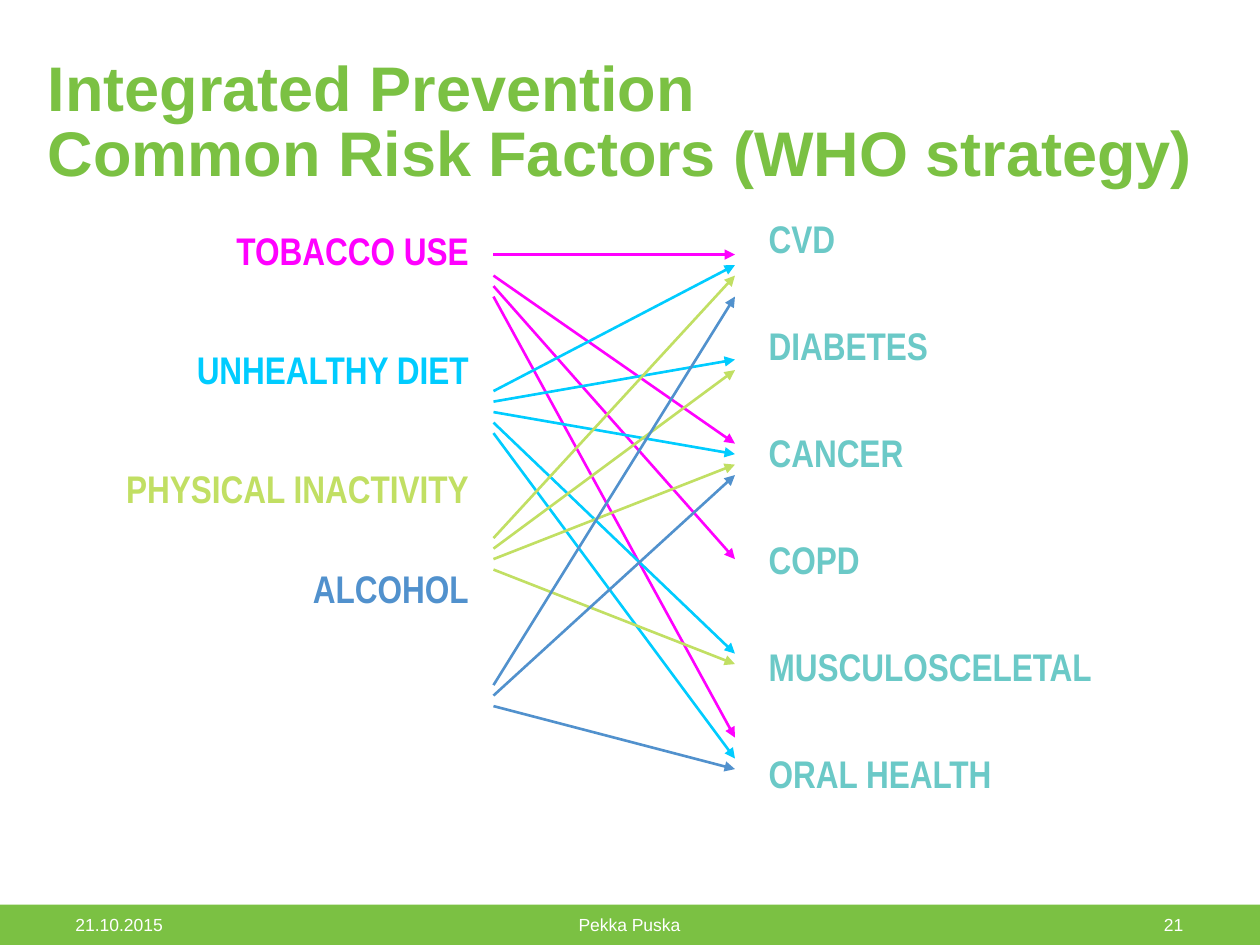
import dataclasses

import pptx
import pptx.dml.color
import pptx.enum.shapes
import pptx.enum.text
import pptx.oxml.ns
import pptx.util
from lxml import etree

ALIGN = pptx.enum.text.PP_ALIGN
ANCHOR = pptx.enum.text.MSO_ANCHOR

# Arrow grid: twelve steps to the inch, rows shifted by a quarter step
STEP = 1 / 12
SHIFT = 0.25
TAIL, HEAD = 47, 70


@dataclasses.dataclass(frozen=True)
class Theme:
    green: str = "7BC143"
    white: str = "FFFFFF"
    teal: str = "6BC9C7"
    pink: str = "FF00FF"
    cyan: str = "00CCFF"
    lime: str = "C1DF63"
    blue: str = "5191CD"
    face: str = "Arial"
    narrow: str = "Arial Narrow"
    title: int = 36
    label: int = 22
    small: int = 10
    line: float = 1.5


THEME = Theme()

# Risk factor, colour, space before, arrows as (start row, end row)
RISKS = [
    ("TOBACCO USE", THEME.pink, 0, [(24, 24), (26, 42), (27, 53), (28, 70)]),
    ("UNHEALTHY DIET", THEME.cyan, 43,
     [(37, 25), (38, 34), (39, 43), (40, 62), (41, 72)]),
    ("PHYSICAL INACTIVITY", THEME.lime, 43,
     [(51, 26), (52, 35), (53, 44), (54, 63)]),
    ("ALCOHOL", THEME.blue, 31.7, [(65, 28), (66, 45), (67, 73)]),
]
ILLS = ["CVD", "DIABETES", "CANCER", "COPD", "MUSCULOSCELETAL", "ORAL HEALTH"]
ILL_GAP = 37.4


def tint(code):
    return pptx.dml.color.RGBColor.from_string(code)


def place(shape, left, top, width, height):
    shape.left, shape.top, shape.width, shape.height = map(
        pptx.util.Inches, (left, top, width, height))


def style(para, face, size, color, bold=False):
    font = para.font
    font.name, font.size, font.bold = face, pptx.util.Pt(size), bold
    font.color.rgb = tint(color)


def set_frame(shape, anchor):
    frame = shape.text_frame
    frame.word_wrap = True
    frame.auto_size = pptx.enum.text.MSO_AUTO_SIZE.NONE
    frame.vertical_anchor = anchor
    return frame


def add_title(slide, text):
    shape = slide.shapes.title
    place(shape, 0.28, 0.3, 9.53, 1.25)
    frame = set_frame(shape, ANCHOR.BOTTOM)
    frame.text = text
    para = frame.paragraphs[0]
    para.alignment = ALIGN.LEFT
    para.line_spacing = 0.85
    style(para, THEME.face, THEME.title, THEME.green, True)


def fill_list(shape, box, items, align, spacing):
    """Fill a body with (text, colour, space before) items, no bullets."""
    place(shape, *box)
    frame = set_frame(shape, ANCHOR.TOP)
    frame.text = "\n".join(text for text, _, _ in items)
    for para, (_, color, gap) in zip(frame.paragraphs, items):
        para.alignment = align
        para.line_spacing = spacing
        para.space_before = pptx.util.Pt(gap)
        props = para._p.get_or_add_pPr()
        props.set("marL", "0")
        props.set("indent", "0")
        etree.SubElement(props, pptx.oxml.ns.qn("a:buNone"))
        style(para, THEME.narrow, THEME.label, color, True)


def add_arrow(slide, start, end, color):
    ends = [pptx.util.Inches(STEP * cell) for cell in
            (TAIL, start + SHIFT, HEAD, end + SHIFT)]
    link = slide.shapes.add_connector(
        pptx.enum.shapes.MSO_CONNECTOR.STRAIGHT, *ends)
    link.line.color.rgb = tint(color)
    link.line.width = pptx.util.Pt(THEME.line)
    # Arrowhead at the end, no shadow
    tip = etree.SubElement(link.line._get_or_add_ln(),
                           pptx.oxml.ns.qn("a:tailEnd"))
    tip.set("type", "triangle")
    etree.SubElement(link._element.spPr, pptx.oxml.ns.qn("a:effectLst"))


def add_band(slide):
    band = slide.shapes.add_shape(
        pptx.enum.shapes.MSO_SHAPE.RECTANGLE, 0, 0, 0, 0)
    place(band, 0, 7.18, 10, 0.32)
    band.shadow.inherit = False
    band.fill.solid()
    band.fill.fore_color.rgb = tint(THEME.green)
    band.line.fill.background()


def add_note(slide, text, left, width, align):
    box = slide.shapes.add_textbox(0, 0, 0, 0)
    place(box, left, 7.22, width, 0.24)
    frame = set_frame(box, ANCHOR.MIDDLE)
    frame.text = text
    para = frame.paragraphs[0]
    para.alignment = align
    style(para, THEME.face, THEME.small, THEME.white)


def main():
    deck = pptx.Presentation()
    deck.slide_width = pptx.util.Inches(10)
    deck.slide_height = pptx.util.Inches(7.5)
    slide = deck.slides.add_slide(
        deck.slide_layouts.get_by_name("Two Content"))

    # Title and the two lists
    add_title(slide,
              "Integrated Prevention\vCommon Risk Factors (WHO strategy)")
    _, left, right = slide.placeholders
    fill_list(left, (0.57, 1.78, 3.25, 4.5),
              [risk[:3] for risk in RISKS], ALIGN.RIGHT, 0.95)
    fill_list(right, (6, 1.7, 3.58, 4.5),
              [(ill, THEME.teal, ILL_GAP if row else 0)
               for row, ill in enumerate(ILLS)], ALIGN.LEFT, 0.9)

    # Arrows from each risk factor to its diseases
    for _, color, _, links in RISKS:
        for start, end in links:
            add_arrow(slide, start, end, color)

    # Footer
    add_band(slide)
    add_note(slide, "21.10.2015", 0.5, 1.19, ALIGN.LEFT)
    add_note(slide, "Pekka Puska", 1.69, 6.61, ALIGN.CENTER)
    add_note(slide, "21", 8.31, 1.18, ALIGN.RIGHT)

    deck.save("out.pptx")


if __name__ == "__main__":
    main()
